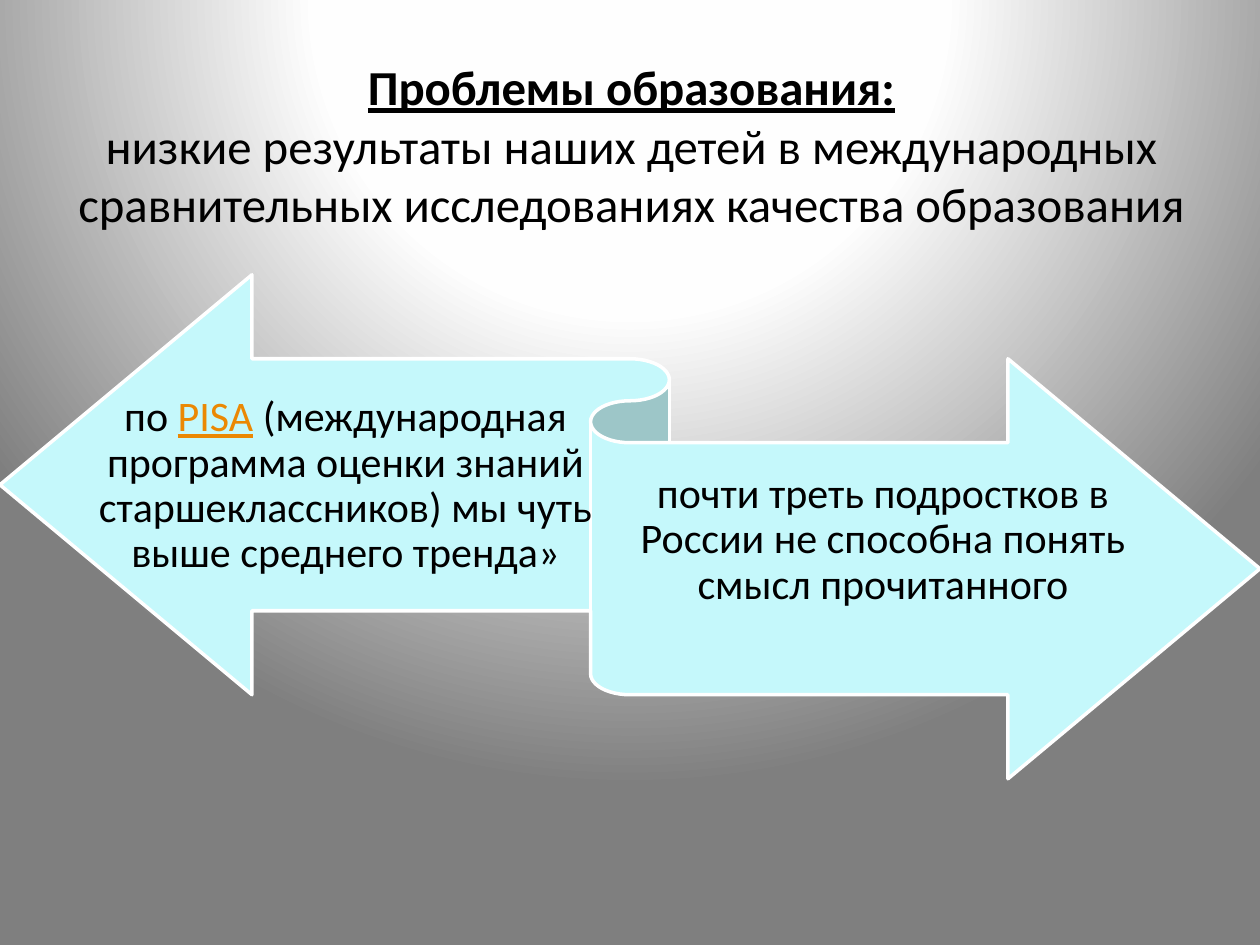
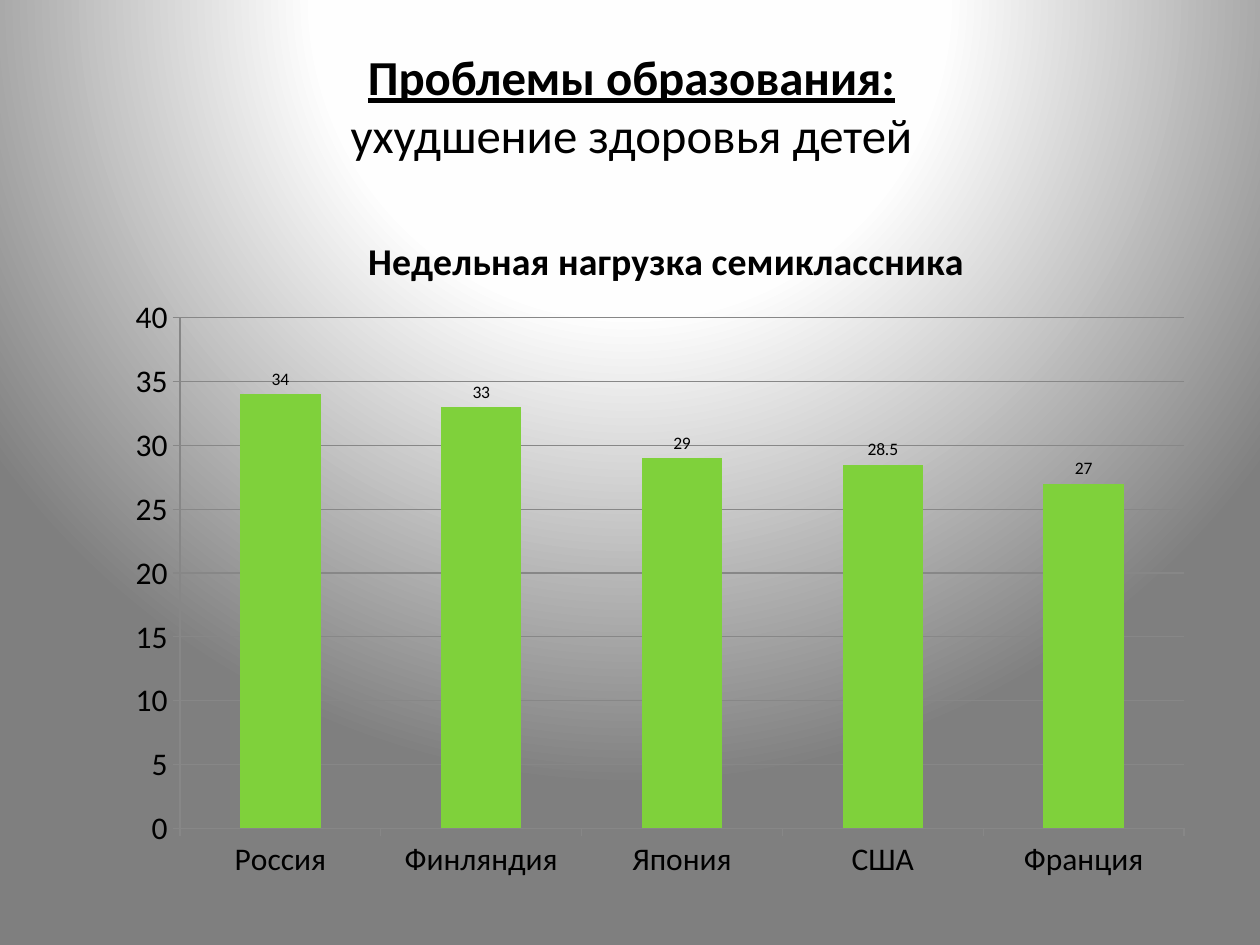
"""Build two slides on problems in education: a ribbon diagram and a workload chart."""
import lxml.etree
import pptx
import pptx.chart.data
import pptx.dml.color
import pptx.enum.chart
import pptx.enum.shapes
import pptx.enum.text
import pptx.oxml
import pptx.oxml.ns
import pptx.util
from pptx.util import Cm, Pt

FONT = "Calibri"
HEADING = "Проблемы образования:"
COLORS = {
    "text": "000000",
    "link": "EB8803",
    "ribbon": "C5F8FB",
    "ribbon_line": "FFFFFF",
    "bar": "7FD13B",
    "axis": "878787",
}
BACKGROUND_STOPS = {0: "FFFFFF", 40: "FEFEFE", 100: "7F7F7F"}


def rgb(name):
    return pptx.dml.color.RGBColor.from_string(COLORS[name])


def style_font(font, size, color="text", bold=False, underline=False):
    font.name = FONT
    font.size = Pt(size)
    font.bold = bold
    font.underline = underline
    font.color.rgb = rgb(color)


def set_background(master):
    stops = "".join(
        f'<a:gs pos="{pos * 1000}"><a:srgbClr val="{color}"/></a:gs>'
        for pos, color in BACKGROUND_STOPS.items()
    )
    gradient = pptx.oxml.parse_xml(
        f'<a:gradFill {pptx.oxml.ns.nsdecls("a")} rotWithShape="1">'
        f'<a:gsLst>{stops}</a:gsLst><a:path path="circle">'
        '<a:fillToRect l="50000" t="-80000" r="50000" b="180000"/>'
        "</a:path></a:gradFill>"
    )
    master.background.fill.solid()
    solid = master.element.find(".//" + pptx.oxml.ns.qn("p:bgPr"))[0]
    solid.getparent().replace(solid, gradient)


def add_titled_slide(prs, topic, top):
    slide = prs.slides.add_slide(prs.slide_layouts[5])
    title = slide.shapes.title
    title.left, title.top, title.width, title.height = Cm(1.3), Cm(top), Cm(22.86), Cm(3.18)
    tf = title.text_frame
    tf.auto_size = pptx.enum.text.MSO_AUTO_SIZE.NONE
    tf.vertical_anchor = pptx.enum.text.MSO_ANCHOR.MIDDLE
    p = tf.paragraphs[0]
    p.text = f"{HEADING}\v{topic}"
    p.alignment = pptx.enum.text.PP_ALIGN.CENTER
    heading, rest = p.runs
    style_font(heading.font, 27.9, bold=True, underline=True)
    style_font(rest.font, 27.9)
    return slide


def add_ribbon(slide, left, top, width, height):
    sp = slide.shapes.add_shape(
        pptx.enum.shapes.MSO_SHAPE.LEFT_RIGHT_RIBBON, Cm(left), Cm(top), Cm(width), Cm(height)
    )
    sp.shadow.inherit = False
    sp.fill.solid()
    sp.fill.fore_color.rgb = rgb("ribbon")
    sp.line.color.rgb = rgb("ribbon_line")
    sp.line.width = Pt(2)


def add_ribbon_text(slide, left, top, width, parts):
    tf = slide.shapes.add_textbox(Cm(left), Cm(top), Cm(width), Cm(4.98)).text_frame
    tf.word_wrap = True
    tf.vertical_anchor = pptx.enum.text.MSO_ANCHOR.MIDDLE
    tf.margin_left = tf.margin_right = 0
    tf.margin_top, tf.margin_bottom = Cm(0.23), Cm(0.25)
    p = tf.paragraphs[0]
    p.alignment = pptx.enum.text.PP_ALIGN.CENTER
    p.line_spacing = 0.9
    for text, color in parts:
        r = p.add_run()
        r.text = text
        style_font(r.font, 24, color, underline=color == "link")


def set_chart_layout(element, index, **fractions):
    for old in element.findall(pptx.oxml.ns.qn("c:layout")):
        element.remove(old)
    layout = lxml.etree.Element(pptx.oxml.ns.qn("c:layout"))
    manual = lxml.etree.SubElement(layout, pptx.oxml.ns.qn("c:manualLayout"))
    settings = {"xMode": "edge", "yMode": "edge", **fractions}
    if "w" in fractions:
        settings = {"layoutTarget": "inner", **settings}
    for tag, value in settings.items():
        lxml.etree.SubElement(manual, pptx.oxml.ns.qn(f"c:{tag}")).set("val", str(value))
    element.insert(index, layout)


def add_column_chart(slide, title, values):
    data = pptx.chart.data.CategoryChartData()
    data.categories = list(values)
    data.add_series("Series 1", list(values.values()))
    chart = slide.shapes.add_chart(
        pptx.enum.chart.XL_CHART_TYPE.COLUMN_CLUSTERED,
        Cm(2.31), Cm(3.94), Cm(22), Cm(14.1), data,
    ).chart
    style_font(chart.font, 18)
    chart.has_legend = False
    chart.has_title = True
    tf = chart.chart_title.text_frame
    tf.text = title
    style_font(tf.paragraphs[0].runs[0].font, 21.6, bold=True)
    chart.chart_title.include_in_layout = False

    plot = chart.plots[0]
    plot.gap_width = 150
    plot.vary_by_categories = False
    fill = plot.series[0].format.fill
    fill.solid()
    fill.fore_color.rgb = rgb("bar")
    plot.has_data_labels = True
    labels = plot.data_labels
    labels.show_value = True
    labels.position = pptx.enum.chart.XL_LABEL_POSITION.OUTSIDE_END
    style_font(labels.font, 10)

    value_axis = chart.value_axis
    value_axis.minimum_scale, value_axis.maximum_scale, value_axis.major_unit = 0, 40, 5
    value_axis.has_major_gridlines = True
    for part in (value_axis, chart.category_axis, value_axis.major_gridlines):
        part.format.line.color.rgb = rgb("axis")
        part.format.line.width = Pt(0.75)

    plot_area = chart.element.find(".//" + pptx.oxml.ns.qn("c:plotArea"))
    set_chart_layout(plot_area, 0, x=0.06, y=0.175, w=0.92, h=0.73)
    title_element = chart.element.find(".//" + pptx.oxml.ns.qn("c:title"))
    set_chart_layout(title_element, 1, x=0.226, y=0.045)


def main():
    prs = pptx.Presentation()
    prs.slide_width, prs.slide_height = Cm(25.4), Cm(19.05)
    set_background(prs.slide_master)

    slide = add_titled_slide(
        prs,
        "низкие результаты наших детей в международных "
        "сравнительных исследованиях качества образования",
        1.33,
    )
    add_ribbon(slide, 0, 5.54, 25.4, 10.16)
    add_ribbon_text(slide, 1.9, 7.32, 10.13, [
        ("по ", "text"),
        ("PISA", "link"),
        (" (международная программа оценки знаний старшеклассников) "
         "мы чуть выше среднего тренда»", "text"),
    ])
    add_ribbon_text(slide, 12.85, 8.41, 9.9, [
        ("почти треть подростков в России не способна понять смысл прочитанного", "text"),
    ])

    slide = add_titled_slide(prs, "ухудшение здоровья детей", 0.53)
    add_column_chart(
        slide,
        "Недельная нагрузка семиклассника",
        {"Россия": 34, "Финляндия": 33, "Япония": 29, "США": 28.5, "Франция": 27},
    )
    prs.save("out.pptx")


if __name__ == "__main__":
    main()
